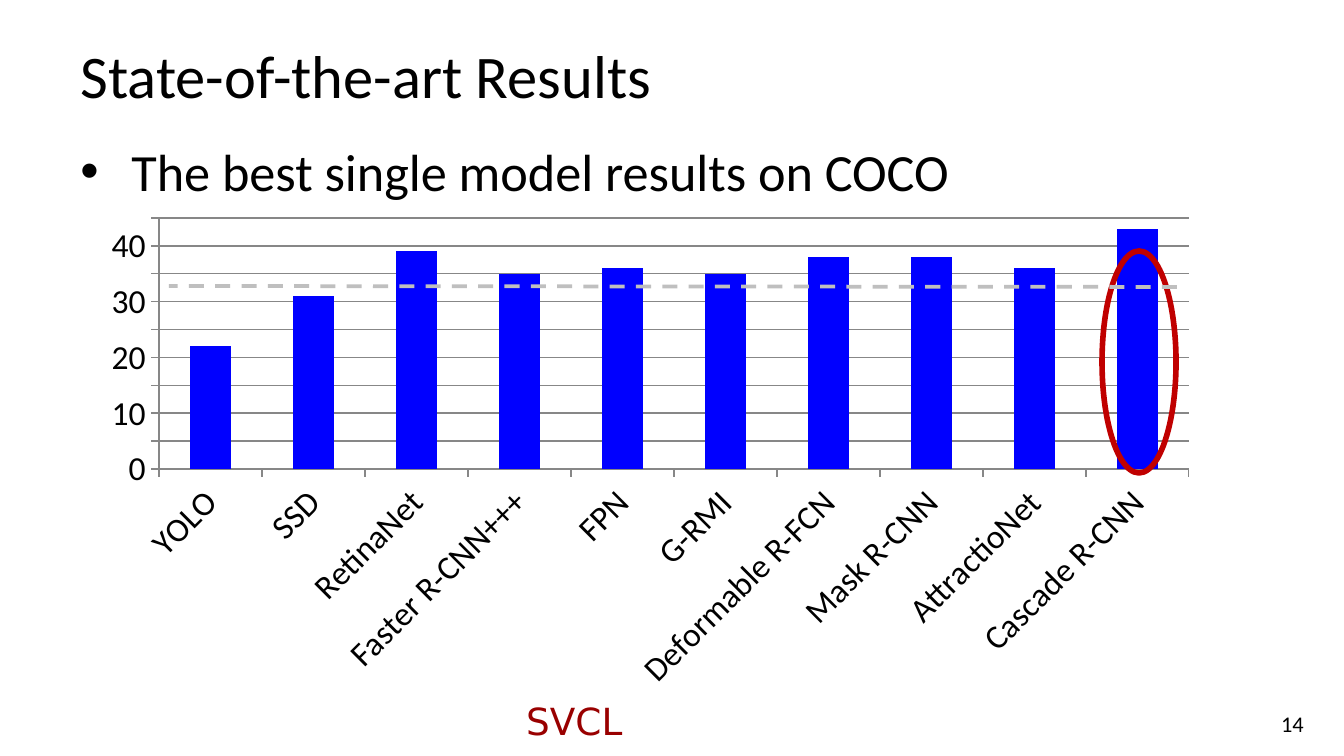
from dataclasses import dataclass

from lxml import etree
from pptx import Presentation
from pptx import util as u
from pptx.chart import data as chart_data
from pptx.dml.color import RGBColor
from pptx.enum import chart as ch, dml, shapes, text
from pptx.oxml.ns import qn

EMU_PER_PX = 914400 / 134.4
SLIDE_SIZE = (1344, 756)

TITLE = "State-of-the-art Results"
BULLET = "The best single model results on COCO"
GROUP = "SVCL"
PAGE_NUMBER = "14"
RESULTS = [
    ("YOLO", 22),
    ("SSD", 31),
    ("RetinaNet", 39),
    ("Faster R-CNN+++", 35),
    ("FPN", 36),
    ("G-RMI", 35),
    ("Deformable R-FCN", 38),
    ("Mask R-CNN", 38),
    ("AttractioNet", 36),
    ("Cascade R-CNN", 43),
]

# left, top, width, height in px
TITLE_BOX = (67, 31, 1210, 86)
BODY_BOX = (67, 132, 1210, 543)
GROUP_BOX = (513, 692, 125, 58)
NUMBER_BOX = (1165, 706, 152, 36)
CHART_BOX = (90, 208, 1122, 492)
PLOT_BOX = (159, 218, 1030, 251)
HIGHLIGHT_BOX = (1028, 325, 222, 74)
BASELINE = (1177, 287, 169, 286)
BULLET_INDENT = 51


@dataclass(frozen=True)
class Theme:
    font: str = "Calibri"
    group_font: str = "DejaVu Sans"
    ink: str = "000000"
    group: str = "990000"
    bar: str = "0000FF"
    grid: str = "878787"
    highlight: str = "C00000"
    baseline: str = "BFBFBF"
    title_size: float = 32.4
    body_size: float = 28
    group_size: float = 20
    chart_size: float = 18
    number_size: float = 12


THEME = Theme()


def px(*lengths):
    return [u.Emu(round(length * EMU_PER_PX)) for length in lengths]


def color(value):
    return RGBColor.from_string(value)


def set_font(font, size, name=THEME.font, ink=THEME.ink):
    font.size, font.name, font.bold = u.Pt(size), name, False
    font.color.rgb = color(ink)


def set_line(line, ink, width):
    line.color.rgb = color(ink)
    line.width = u.Pt(width)


def write(shape, words, size, align=text.PP_ALIGN.LEFT, **font):
    paragraph = shape.text_frame.paragraphs[0]
    paragraph.alignment = align
    run = paragraph.add_run()
    run.text = words
    set_font(run.font, size, **font)
    return paragraph


def place(shape, box):
    shape.left, shape.top, shape.width, shape.height = px(*box)


def add_title_and_body(slide):
    title, body = slide.placeholders
    for shape, box in ((title, TITLE_BOX), (body, BODY_BOX)):
        place(shape, box)
        shape.text_frame.auto_size = text.MSO_AUTO_SIZE.NONE
    title.text_frame.vertical_anchor = text.MSO_ANCHOR.MIDDLE
    write(title, TITLE, THEME.title_size)

    paragraph = write(body, BULLET, THEME.body_size)
    paragraph.space_before = u.Pt(0)
    properties = paragraph._p.get_or_add_pPr()
    indent = px(BULLET_INDENT)[0]
    properties.set("marL", str(indent))
    properties.set("indent", str(-indent))
    etree.SubElement(properties, qn("a:buFont")).set("typeface", "Arial")
    etree.SubElement(properties, qn("a:buChar")).set("char", "•")


def add_labels(slide):
    group = slide.shapes.add_textbox(*px(*GROUP_BOX))
    group.text_frame.word_wrap = False
    write(group, GROUP, THEME.group_size, name=THEME.group_font, ink=THEME.group)

    number = slide.shapes.add_textbox(*px(*NUMBER_BOX))
    number.text_frame.word_wrap = True
    number.text_frame.vertical_anchor = text.MSO_ANCHOR.MIDDLE
    write(number, PAGE_NUMBER, THEME.number_size, text.PP_ALIGN.RIGHT)


def fix_plot_area(chart):
    """Pin the inner plot area to PLOT_BOX, as fractions of CHART_BOX."""
    left, top, width, height = CHART_BOX
    plot_left, plot_top, plot_width, plot_height = PLOT_BOX
    settings = [
        ("layoutTarget", "inner"),
        ("xMode", "edge"),
        ("yMode", "edge"),
        ("x", round((plot_left - left) / width, 4)),
        ("y", round((plot_top - top) / height, 4)),
        ("w", round(plot_width / width, 4)),
        ("h", round(plot_height / height, 4)),
    ]
    plot_area = chart._chartSpace.chart.plotArea
    for old in plot_area.findall(qn("c:layout")):
        plot_area.remove(old)
    layout = etree.Element(qn("c:layout"))
    plot_area.insert(0, layout)
    manual = etree.SubElement(layout, qn("c:manualLayout"))
    for tag, value in settings:
        etree.SubElement(manual, qn("c:" + tag)).set("val", str(value))


def add_results_chart(slide):
    data = chart_data.CategoryChartData(number_format="0")
    data.categories = [name for name, _ in RESULTS]
    data.add_series("Series 1", [value for _, value in RESULTS])
    chart = slide.shapes.add_chart(
        ch.XL_CHART_TYPE.COLUMN_CLUSTERED, *px(*CHART_BOX), data
    ).chart
    chart.has_legend = chart.has_title = False
    set_font(chart.font, THEME.chart_size)
    fix_plot_area(chart)

    plot = chart.plots[0]
    plot.gap_width = 150
    plot.vary_by_categories = False
    fill = plot.series[0].format.fill
    fill.solid()
    fill.fore_color.rgb = color(THEME.bar)

    for axis in (chart.category_axis, chart.value_axis):
        axis.major_tick_mark = ch.XL_TICK_MARK.OUTSIDE
        set_font(axis.tick_labels.font, THEME.chart_size)
        set_line(axis.format.line, THEME.grid, 0.75)
    value_axis = chart.value_axis
    value_axis.minimum_scale, value_axis.maximum_scale = 0, 45
    value_axis.major_unit = 5
    value_axis.has_major_gridlines = True
    set_line(value_axis.major_gridlines.format.line, THEME.grid, 0.75)
    category_text = chart.category_axis._element.find(qn("c:txPr"))
    category_text.find(qn("a:bodyPr")).set("rot", str(-45 * 60000))


def add_marks(slide):
    highlight = slide.shapes.add_shape(
        shapes.MSO_SHAPE.OVAL, *px(*HIGHLIGHT_BOX)
    )
    highlight.rotation = 90
    highlight.shadow.inherit = False
    highlight.fill.background()
    set_line(highlight.line, THEME.highlight, 3)

    baseline = slide.shapes.add_connector(
        shapes.MSO_CONNECTOR.STRAIGHT, *px(*BASELINE)
    )
    set_line(baseline.line, THEME.baseline, 2)
    baseline.line.dash_style = dml.MSO_LINE.DASH
    etree.SubElement(baseline._element.spPr, qn("a:effectLst"))


def main():
    presentation = Presentation()
    presentation.slide_width, presentation.slide_height = px(*SLIDE_SIZE)
    slide = presentation.slides.add_slide(presentation.slide_layouts[1])
    add_title_and_body(slide)
    add_labels(slide)
    add_results_chart(slide)
    add_marks(slide)
    presentation.save("out.pptx")


if __name__ == "__main__":
    main()
